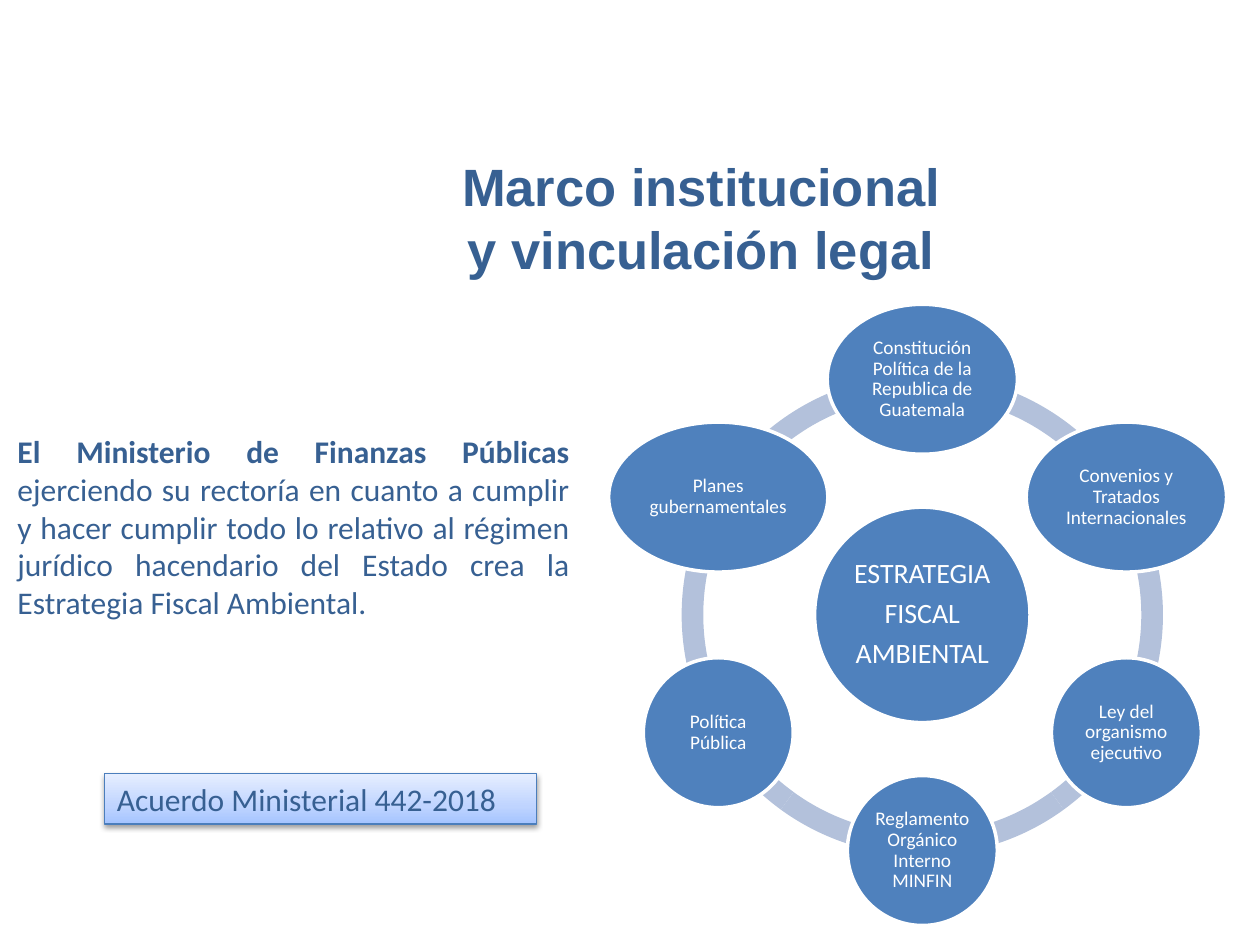
import math
from dataclasses import dataclass

from lxml import etree
from pptx import Presentation
from pptx.dml.color import RGBColor
from pptx.enum import shapes, text
from pptx.oxml.ns import qn
from pptx.util import Inches, Pt


@dataclass(frozen=True)
class Theme:
    heading_font: str = "Arial"
    body_font: str = "Calibri"
    ink: str = "376092"
    disc: str = "4F81BD"
    ring: str = "B3C1DB"
    white: str = "FFFFFF"
    border: str = "4B7EBC"
    gradient: tuple = ((0, "A4C4FF"), (35, "BFD4FF"), (100, "E6EEFF"))
    title_size: float = 30
    body_size: float = 18
    hub_size: float = 16
    node_size: float = 11


THEME = Theme()


def write(box, paragraphs, *, size, color, font=THEME.body_font, align=None,
          anchor=text.MSO_ANCHOR.TOP, insets=(0.1, 0.05), line_spacing=None,
          space_after=None, grow=False):
    """Fill a box; each paragraph is a list of (words, bold) spans."""
    frame = box.text_frame
    frame.word_wrap = True
    frame.vertical_anchor = anchor
    frame.margin_left = frame.margin_right = Inches(insets[0])
    frame.margin_top = frame.margin_bottom = Inches(insets[1])
    if grow:
        frame.auto_size = text.MSO_AUTO_SIZE.SHAPE_TO_FIT_TEXT
    for index, spans in enumerate(paragraphs):
        para = frame.add_paragraph() if index else frame.paragraphs[0]
        para.alignment = align
        para.line_spacing = line_spacing
        if space_after is not None:
            para.space_after = Pt(space_after)
        for position, (words, bold) in enumerate(spans):
            for row, piece in enumerate(words.split("\n")):
                if row:
                    para.add_line_break()
                span = para.add_run()
                span.text = piece
                span.font.name = font
                span.font.size = Pt(size)
                span.font.bold = bold
                span.font.color.rgb = RGBColor.from_string(color)


class SlideBuilder:
    def __init__(self, page, theme):
        self.page = page
        self.theme = theme

    def label(self, left, top, width, height, paragraphs, **style):
        box = self.page.shapes.add_textbox(
            Inches(left), Inches(top), Inches(width), Inches(height))
        write(box, paragraphs, **style)

    def shape(self, kind, left, top, width, height, fill):
        shape = self.page.shapes.add_shape(
            kind, Inches(left), Inches(top), Inches(width), Inches(height))
        shape.shadow.inherit = False
        shape.fill.solid()
        shape.fill.fore_color.rgb = RGBColor.from_string(fill)
        shape.line.fill.background()
        return shape

    def arc(self, center, radius, start, end, thickness):
        x, y = center
        arc = self.shape(shapes.MSO_SHAPE.BLOCK_ARC, x - radius, y - radius,
                         2 * radius, 2 * radius, self.theme.ring)
        # Angles are stored in 60000ths of a degree, scaled by 100000
        arc.adjustments[0] = start * 0.6
        arc.adjustments[1] = end * 0.6
        arc.adjustments[2] = thickness

    def disc(self, center, width, height, lines, size):
        x, y = center
        disc = self.shape(shapes.MSO_SHAPE.OVAL, x - width / 2, y - height / 2,
                          width, height, self.theme.disc)
        disc.line.color.rgb = RGBColor.from_string(self.theme.white)
        disc.line.width = Pt(2)
        write(disc, [[(line, False)] for line in lines], size=size,
              color=self.theme.white, align=text.PP_ALIGN.CENTER,
              anchor=text.MSO_ANCHOR.MIDDLE, insets=(0.02, 0.02),
              line_spacing=0.9, space_after=round(size * 0.35, 1))

    def callout(self, left, top, width, height, words):
        box = self.shape(shapes.MSO_SHAPE.RECTANGLE, left, top, width, height,
                         self.theme.white)
        box.line.color.rgb = RGBColor.from_string(self.theme.border)
        box.line.width = Pt(0.75)
        self.add_gradient(box)
        self.add_shadow(box)
        write(box, [[(words, False)]], size=self.theme.body_size,
              color=self.theme.ink, align=text.PP_ALIGN.LEFT, grow=True)

    def add_gradient(self, box):
        box.fill.gradient()
        box.fill.gradient_angle = 90
        stops = box._element.spPr.find(".//" + qn("a:gsLst"))
        for stop in list(stops):
            stops.remove(stop)
        for percent, color in self.theme.gradient:
            stop = etree.SubElement(stops, qn("a:gs"), pos=str(percent * 1000))
            etree.SubElement(stop, qn("a:srgbClr"), val=color)

    def add_shadow(self, box):
        effects = box._element.spPr.find(qn("a:effectLst"))
        shadow = etree.SubElement(
            effects, qn("a:outerShdw"), blurRad=str(int(Pt(3.1))),
            dist=str(int(Pt(1.6))), dir="5400000", rotWithShape="0")
        color = etree.SubElement(shadow, qn("a:srgbClr"), val="000000")
        etree.SubElement(color, qn("a:alpha"), val="38000")


def main():
    deck = Presentation()
    deck.slide_width, deck.slide_height = Inches(10), Inches(7.5)
    page = deck.slides.add_slide(deck.slide_layouts[6])
    builder = SlideBuilder(page, THEME)

    # Title
    builder.label(2.44, 1.18, 6.25, 1.09,
                  [[("Marco institucional\ny vinculación legal", True)]],
                  size=THEME.title_size, color=THEME.ink,
                  font=THEME.heading_font, align=text.PP_ALIGN.CENTER,
                  anchor=text.MSO_ANCHOR.MIDDLE, insets=(0, 0))

    # Statement and ministerial agreement
    builder.label(0.04, 3.38, 4.58, 1.62, [[
        ("El Ministerio de Finanzas Públicas ", True),
        ("ejerciendo su rectoría en cuanto a cumplir y hacer cumplir todo lo "
         "relativo al régimen jurídico hacendario del Estado crea la "
         "Estrategia Fiscal Ambiental.", False)]],
        size=THEME.body_size, color=THEME.ink,
        align=text.PP_ALIGN.JUSTIFY, grow=True)
    builder.callout(0.83, 6.14, 3.43, 0.4, "Acuerdo Ministerial 442-2018")

    # Ring: five short arcs below, one long arc over the top
    center = (7.32, 4.88)
    bounds = (18, 54, 90, 126, 162, 198)
    for start, end in zip(bounds, bounds[1:] + bounds[:1]):
        builder.arc(center, 1.91, start, end, 0.045)

    # Hub
    builder.disc(center, 1.71, 1.71, ["ESTRATEGIA", "FISCAL", "AMBIENTAL"],
                 THEME.hub_size)

    # Legal instruments, clockwise from the top
    instruments = (
        ("Constitución Política de la Republica de Guatemala", 1.51),
        ("Convenios y Tratados Internacionales", 1.59),
        ("Ley del organismo ejecutivo", 1.19),
        ("Reglamento Orgánico Interno MINFIN", 1.19),
        ("Política Pública", 1.19),
        ("Planes gubernamentales", 1.74),
    )
    orbit = 1.87
    for index, (name, width) in enumerate(instruments):
        angle = math.tau * index / len(instruments)
        spot = (center[0] + orbit * math.sin(angle),
                center[1] - orbit * math.cos(angle))
        builder.disc(spot, width, 1.19, [name], THEME.node_size)

    deck.save("out.pptx")


if __name__ == "__main__":
    main()
